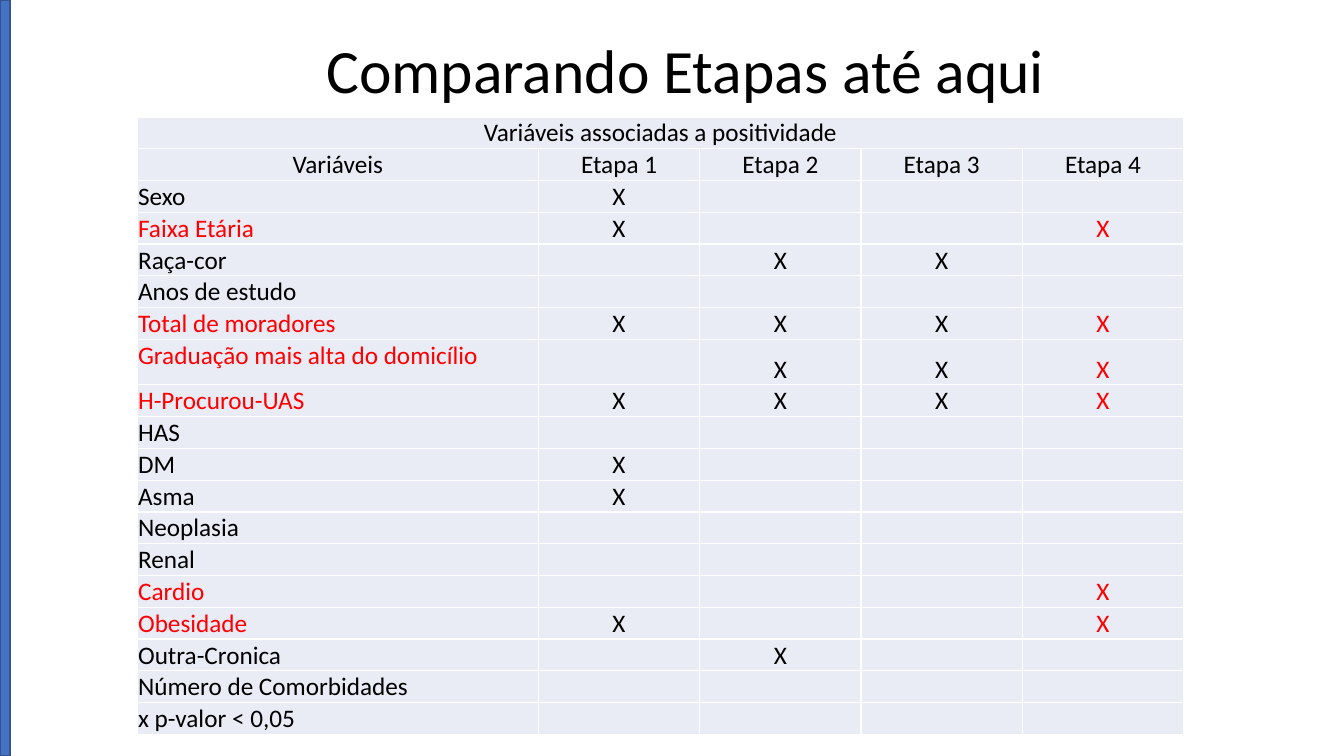
from dataclasses import dataclass

from lxml import etree
from pptx import Presentation
from pptx import util as u
from pptx.dml.color import RGBColor
from pptx.enum import shapes, text
from pptx.oxml import ns
from pptx.slide import Slide
from pptx.table import Table, _Cell

PX = 9144  # EMU in one px, 100 px to the inch
FONT = "Calibri"
BLACK = RGBColor(0x00, 0x00, 0x00)
RED = RGBColor(0xFF, 0x00, 0x00)
WHITE = RGBColor(0xFF, 0xFF, 0xFF)
CELL_FILL = RGBColor(0xE9, 0xEB, 0xF5)
BAR_FILL = RGBColor(0x44, 0x72, 0xC4)
BAR_LINE = RGBColor(0x32, 0x54, 0x91)

SLIDE_WIDTH, SLIDE_HEIGHT = 1333, 750
LABEL_WIDTH, STAGE_WIDTH = 398, 160
ROW_HEIGHT, TALL_ROW_HEIGHT = 28, 45
STAGES = (1, 2, 3, 4)
HEADER_ROWS = 2


@dataclass(frozen=True)
class Variable:
    name: str
    stages: tuple[int, ...] = ()
    height: int = ROW_HEIGHT

    @property
    def color(self) -> RGBColor:
        """Variables associated in the latest stage stand out in red."""
        return RED if STAGES[-1] in self.stages else BLACK


VARIABLES = [
    Variable("Sexo", (1,)),
    Variable("Faixa Etária", (1, 4)),
    Variable("Raça-cor", (2, 3)),
    Variable("Anos de estudo"),
    Variable("Total de moradores", (1, 2, 3, 4)),
    Variable("Graduação mais alta do domicílio", (2, 3, 4), TALL_ROW_HEIGHT),
    Variable("H-Procurou-UAS", (1, 2, 3, 4)),
    Variable("HAS"),
    Variable("DM", (1,)),
    Variable("Asma", (1,)),
    Variable("Neoplasia"),
    Variable("Renal"),
    Variable("Cardio", (4,)),
    Variable("Obesidade", (1, 4)),
    Variable("Outra-Cronica", (2,)),
    Variable("Número de Comorbidades"),
    Variable("x p-valor < 0,05"),
]


def px(length: int) -> u.Emu:
    return u.Emu(length * PX)


def style_cell(cell: _Cell) -> None:
    """Give a cell its narrow margins, white borders and pale fill."""
    cell.margin_left = cell.margin_right = cell.margin_top = px(1)
    cell.margin_bottom = 0
    properties = cell._tc.get_or_add_tcPr()
    for side in ("lnL", "lnR", "lnT", "lnB"):
        border = etree.SubElement(properties, ns.qn(f"a:{side}"), w=str(u.Pt(1)))
        fill = etree.SubElement(border, ns.qn("a:solidFill"))
        etree.SubElement(fill, ns.qn("a:srgbClr"), val=str(WHITE))
    cell.fill.solid()
    cell.fill.fore_color.rgb = CELL_FILL


def write_cell(
    cell: _Cell,
    words: str,
    color: RGBColor = BLACK,
    align: text.PP_ALIGN = text.PP_ALIGN.CENTER,
    anchor: text.MSO_ANCHOR = text.MSO_ANCHOR.TOP,
) -> None:
    cell.text = words
    cell.vertical_anchor = anchor
    para = cell.text_frame.paragraphs[0]
    para.alignment = align
    para.font.name = FONT
    para.font.size = u.Pt(18)
    para.font.color.rgb = color


def fill_header(table: Table) -> None:
    banner = table.cell(0, 0)
    banner.merge(table.cell(0, len(STAGES)))
    write_cell(banner, "Variáveis associadas a positividade")
    write_cell(table.cell(1, 0), "Variáveis")
    for stage in STAGES:
        write_cell(table.cell(1, stage), f"Etapa {stage}", anchor=text.MSO_ANCHOR.BOTTOM)


def fill_variable(table: Table, row: int, variable: Variable) -> None:
    write_cell(table.cell(row, 0), variable.name, variable.color, text.PP_ALIGN.LEFT)
    for stage in variable.stages:
        color = RED if stage == STAGES[-1] else BLACK
        write_cell(table.cell(row, stage), "X", color, anchor=text.MSO_ANCHOR.BOTTOM)


def add_comparison(page: Slide) -> None:
    widths = [LABEL_WIDTH] + [STAGE_WIDTH] * len(STAGES)
    heights = [ROW_HEIGHT] * HEADER_ROWS + [item.height for item in VARIABLES]
    table = page.shapes.add_table(
        len(heights), len(widths), px(136), px(116), px(sum(widths)), px(sum(heights))
    ).table
    table.first_row = table.horz_banding = False
    for column, width in zip(table.columns, widths):
        column.width = px(width)
    for row, height in zip(table.rows, heights):
        row.height = px(height)
    for cell in table.iter_cells():
        style_cell(cell)
    fill_header(table)
    for row, variable in enumerate(VARIABLES, HEADER_ROWS):
        fill_variable(table, row, variable)


def set_title(page: Slide) -> None:
    title = page.shapes.title
    title.left, title.top, title.width, title.height = px(105), px(0), px(1150), px(145)
    title.text_frame.text = "Comparando Etapas até aqui"
    title.text_frame.vertical_anchor = text.MSO_ANCHOR.MIDDLE
    para = title.text_frame.paragraphs[0]
    para.alignment = text.PP_ALIGN.CENTER
    para.line_spacing = 0.9
    para.font.name = FONT
    para.font.size = u.Pt(44)
    para.font.color.rgb = BLACK


def add_side_bar(page: Slide) -> None:
    bar = page.shapes.add_shape(
        shapes.MSO_SHAPE.RECTANGLE, px(0), px(0), px(10), px(SLIDE_HEIGHT)
    )
    bar.shadow.inherit = False
    bar.fill.solid()
    bar.fill.fore_color.rgb = BAR_FILL
    bar.line.color.rgb = BAR_LINE
    bar.line.width = u.Pt(1)


def main() -> None:
    deck = Presentation()
    deck.slide_width, deck.slide_height = px(SLIDE_WIDTH), px(SLIDE_HEIGHT)
    page = deck.slides.add_slide(deck.slide_layouts.get_by_name("Title Only"))
    set_title(page)
    add_comparison(page)
    add_side_bar(page)
    deck.save("out.pptx")


if __name__ == "__main__":
    main()
